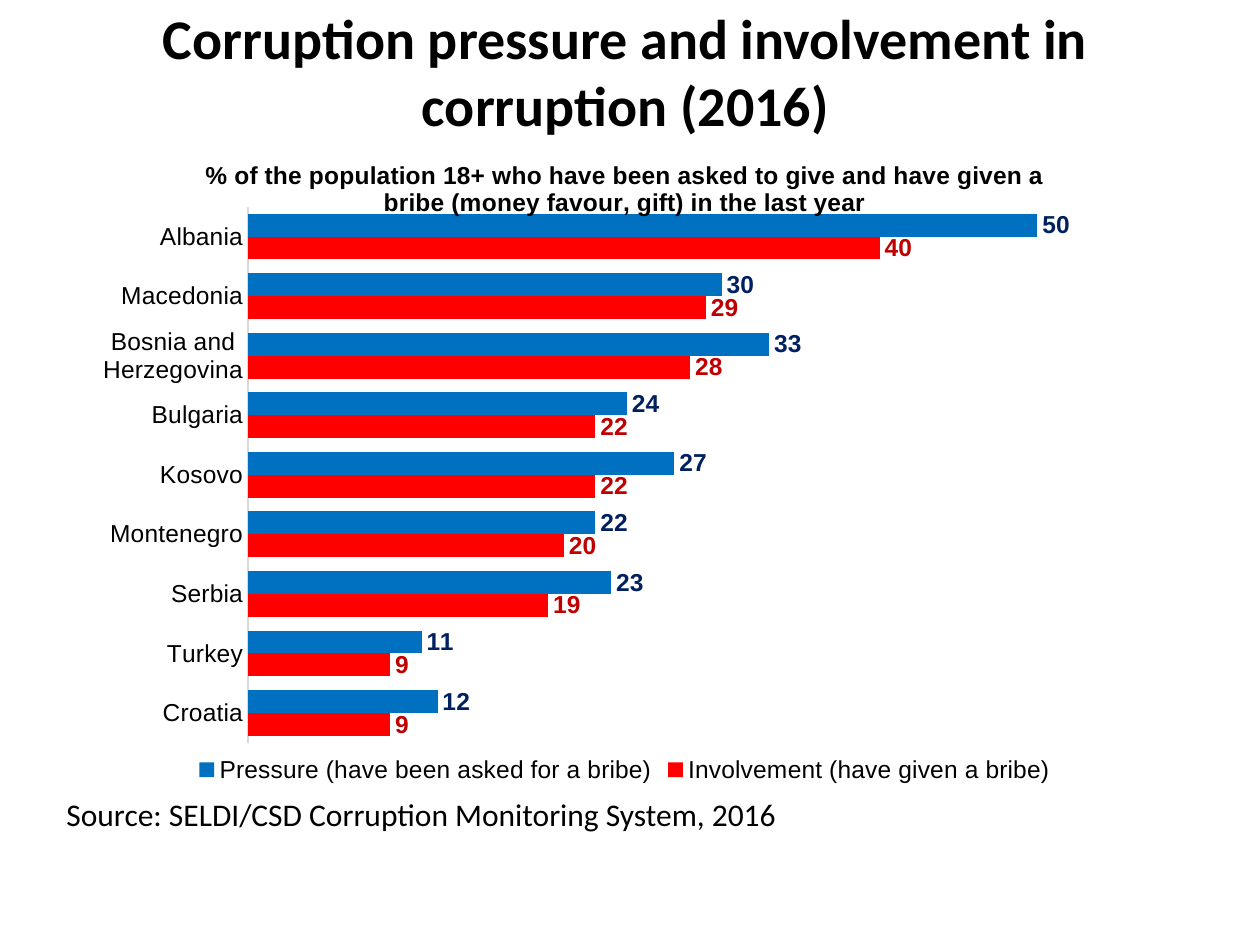
import pptx
import pptx.chart.data
import pptx.dml.color
import pptx.enum.chart
import pptx.enum.text
import pptx.oxml
import pptx.oxml.ns
import pptx.util
from pptx.util import Cm

COUNTRIES = ["Croatia", "Turkey", "Serbia", "Montenegro", "Kosovo", "Bulgaria",
             "Bosnia and Herzegovina", "Macedonia", "Albania"]
SERIES = [
    ("Involvement (have given a bribe)", [9, 9, 19, 20, 22, 22, 28, 29, 40], "FF0000", "C00000"),
    ("Pressure (have been asked for a bribe)", [12, 11, 23, 22, 27, 24, 33, 30, 50], "0070C0", "002060"),
]
CHART_TITLE = ("% of the population 18+ who have been asked to give and have given a "
               "bribe (money favour, gift) in the last year")
PLOT_LAYOUT = {"x": 0.17, "y": 0.11, "w": 0.83, "h": 0.82}


def color(value):
    """Turn a hex string into a colour."""
    return pptx.dml.color.RGBColor.from_string(value)


def set_font(font, name, size, bold=False, value="000000"):
    """Set the face, size, weight and colour of a font."""
    font.name = name
    font.size = pptx.util.Pt(size)
    font.bold = bold
    font.color.rgb = color(value)


def add_text(page, text, left, top, width, height, size, bold=False,
             align=pptx.enum.text.PP_ALIGN.LEFT, anchor=pptx.enum.text.MSO_ANCHOR.TOP):
    """Add a wrapping text box with one paragraph."""
    box = page.shapes.add_textbox(Cm(left), Cm(top), Cm(width), Cm(height))
    frame = box.text_frame
    frame.word_wrap = True
    frame.vertical_anchor = anchor
    paragraph = frame.paragraphs[0]
    paragraph.text = text
    paragraph.alignment = align
    set_font(paragraph.font, "Calibri", size, bold)


def place_plot(chart):
    """Fix the inner plot area as fractions of the chart."""
    plot_area = chart.plots[0]._element.getparent()
    for layout in plot_area.findall(pptx.oxml.ns.qn("c:layout")):
        plot_area.remove(layout)
    modes = '<c:xMode val="edge"/><c:yMode val="edge"/>'
    sizes = "".join(f'<c:{key} val="{value}"/>' for key, value in PLOT_LAYOUT.items())
    plot_area.insert(0, pptx.oxml.parse_xml(
        f'<c:layout {pptx.oxml.ns.nsdecls("c")}><c:manualLayout>'
        f'<c:layoutTarget val="inner"/>{modes}{sizes}</c:manualLayout></c:layout>'))


def style_axes(chart):
    """Draw a thin category axis and hide the value axis."""
    category_axis = chart.category_axis
    category_axis.major_tick_mark = pptx.enum.chart.XL_TICK_MARK.NONE
    category_axis.format.line.color.rgb = color("D9D9D9")
    category_axis.format.line.width = pptx.util.Pt(0.75)
    value_axis = chart.value_axis
    value_axis.minimum_scale = 0
    value_axis.maximum_scale = 60
    value_axis.has_major_gridlines = False
    value_axis.visible = False


def style_series(series, fill, label_color):
    """Colour the bars and label their ends."""
    series.format.fill.solid()
    series.format.fill.fore_color.rgb = color(fill)
    labels = series.data_labels
    labels.show_value = True
    labels.position = pptx.enum.chart.XL_LABEL_POSITION.OUTSIDE_END
    labels.number_format = "#,##0"
    labels.number_format_is_linked = False
    set_font(labels.font, "Arial", 14, True, label_color)


def add_bribery_chart(page):
    """Add the bar chart of pressure and involvement by country."""
    data = pptx.chart.data.CategoryChartData()
    data.categories = COUNTRIES
    for name, values, _, _ in SERIES:
        data.add_series(name, values)
    chart = page.shapes.add_chart(pptx.enum.chart.XL_CHART_TYPE.BAR_CLUSTERED,
                                  Cm(1.09), Cm(2.72), Cm(23.01), Cm(13.18), data).chart
    set_font(chart.font, "Arial", 14)
    chart.has_title = True
    heading = chart.chart_title.text_frame.paragraphs[0]
    heading.text = CHART_TITLE
    set_font(heading.font, "Arial", 14, True)
    chart.chart_title.include_in_layout = False
    chart.has_legend = True
    chart.legend.position = pptx.enum.chart.XL_LEGEND_POSITION.BOTTOM
    chart.legend.include_in_layout = False
    plot = chart.plots[0]
    plot.gap_width = 60
    plot.overlap = 0
    plot.vary_by_categories = False
    for series, (_, _, fill, label_color) in zip(plot.series, SERIES):
        style_series(series, fill, label_color)
    style_axes(chart)
    place_plot(chart)


def main():
    """Build and save the slide."""
    deck = pptx.Presentation()
    deck.slide_width, deck.slide_height = Cm(25.4), Cm(19.05)
    page = deck.slides.add_slide(deck.slide_layouts[6])
    add_text(page, "Corruption pressure and involvement in corruption (2016)",
             0.71, 0.53, 23.8, 1.8, 32, True,
             pptx.enum.text.PP_ALIGN.CENTER, pptx.enum.text.MSO_ANCHOR.MIDDLE)
    add_bribery_chart(page)
    add_text(page, "Source: SELDI/CSD Corruption Monitoring System, 2016",
             1.09, 15.9, 22.61, 1.02, 18)
    deck.save("out.pptx")


if __name__ == "__main__":
    main()
